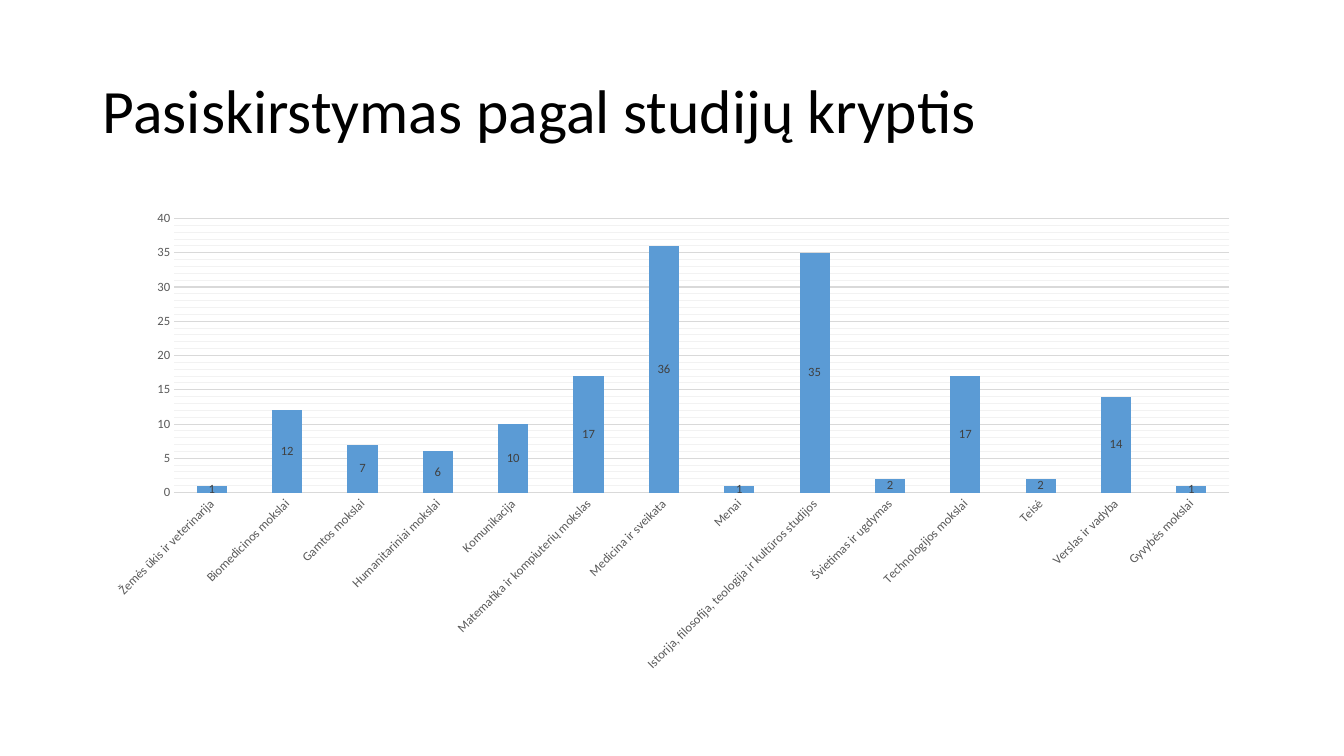
"""Build a slide with a column chart of study fields."""
from copy import deepcopy
from dataclasses import dataclass

from pptx import Presentation
from pptx.chart.data import CategoryChartData
from pptx.dml.color import RGBColor
from pptx.enum.chart import XL_CHART_TYPE, XL_LABEL_POSITION, XL_TICK_MARK
from pptx.enum.text import MSO_ANCHOR, PP_ALIGN
from pptx.util import Inches, Pt


@dataclass(frozen=True)
class Theme:
    font: str = "Calibri"
    title: RGBColor = RGBColor(0x00, 0x00, 0x00)
    bar: RGBColor = RGBColor(0x5B, 0x9B, 0xD5)
    axis_text: RGBColor = RGBColor(0x59, 0x59, 0x59)
    label_text: RGBColor = RGBColor(0x40, 0x40, 0x40)
    major_grid: RGBColor = RGBColor(0xD9, 0xD9, 0xD9)
    minor_grid: RGBColor = RGBColor(0xF2, 0xF2, 0xF2)
    title_size: Pt = Pt(44)
    chart_size: Pt = Pt(10)
    small_size: Pt = Pt(9)


def style_font(font, size, color):
    font.name = theme.font
    font.size = size
    font.bold = False
    font.color.rgb = color


theme = Theme()
study_fields = {
    "Žemės ūkis ir veterinarija": 1,
    "Biomedicinos mokslai": 12,
    "Gamtos mokslai": 7,
    "Humanitariniai mokslai": 6,
    "Komunikacija": 10,
    "Matematika ir kompiuterių mokslas": 17,
    "Medicina ir sveikata": 36,
    "Menai": 1,
    "Istorija, filosofija, teologija ir kultūros studijos": 35,
    "Švietimas ir ugdymas": 2,
    "Technologijos mokslai": 17,
    "Teisė": 2,
    "Verslas ir vadyba": 14,
    "Gyvybės mokslai": 1,
}

presentation = Presentation()
presentation.slide_width = Inches(13.33)
presentation.slide_height = Inches(7.5)
slide = presentation.slides.add_slide(presentation.slide_layouts[5])

title = slide.shapes.title
title.left, title.top = Inches(0.92), Inches(0.4)
title.width, title.height = Inches(11.5), Inches(1.45)
title.text_frame.text = "Pasiskirstymas pagal studijų kryptis"
title.text_frame.vertical_anchor = MSO_ANCHOR.MIDDLE
paragraph = title.text_frame.paragraphs[0]
paragraph.alignment = PP_ALIGN.LEFT
paragraph.line_spacing = 0.9
style_font(paragraph.runs[0].font, theme.title_size, theme.title)

chart_data = CategoryChartData()
chart_data.categories = list(study_fields)
chart_data.add_series("Series 1", list(study_fields.values()))
chart = slide.shapes.add_chart(
    XL_CHART_TYPE.COLUMN_STACKED,
    Inches(0.92), Inches(2), Inches(11.5), Inches(4.76), chart_data,
).chart
chart.has_legend = False
chart.has_title = False
style_font(chart.font, theme.chart_size, theme.title)

plot = chart.plots[0]
plot.gap_width = 150
plot.overlap = 100
plot.vary_by_categories = False
fill = plot.series[0].format.fill
fill.solid()
fill.fore_color.rgb = theme.bar

plot.has_data_labels = True
labels = plot.data_labels
labels.show_value = True
labels.position = XL_LABEL_POSITION.CENTER
style_font(labels.font, theme.small_size, theme.label_text)

category_axis, value_axis = chart.category_axis, chart.value_axis
for axis in (category_axis, value_axis):
    axis.major_tick_mark = XL_TICK_MARK.NONE
    axis.minor_tick_mark = XL_TICK_MARK.NONE
    axis.format.line.fill.background()
    style_font(axis.tick_labels.font, theme.small_size, theme.axis_text)

category_axis.format.line.color.rgb = theme.major_grid
category_axis.format.line.width = Pt(0.75)
label_body = category_axis._element.xpath("c:txPr/a:bodyPr")[0]
label_body.set("rot", "-2700000")
label_body.set("vert", "horz")

value_axis.minimum_scale = 0
value_axis.maximum_scale = 40
value_axis.major_unit = 5
value_axis.minor_unit = 1
value_axis.has_major_gridlines = True
value_axis.has_minor_gridlines = True
major_line = value_axis.major_gridlines.format.line
major_line.color.rgb = theme.major_grid
major_line.width = Pt(0.75)

minor_style = deepcopy(value_axis._element.xpath("c:majorGridlines/c:spPr")[0])
minor_style.xpath(".//a:srgbClr")[0].set("val", str(theme.minor_grid))
value_axis._element.xpath("c:minorGridlines")[0].append(minor_style)

presentation.save("out.pptx")
